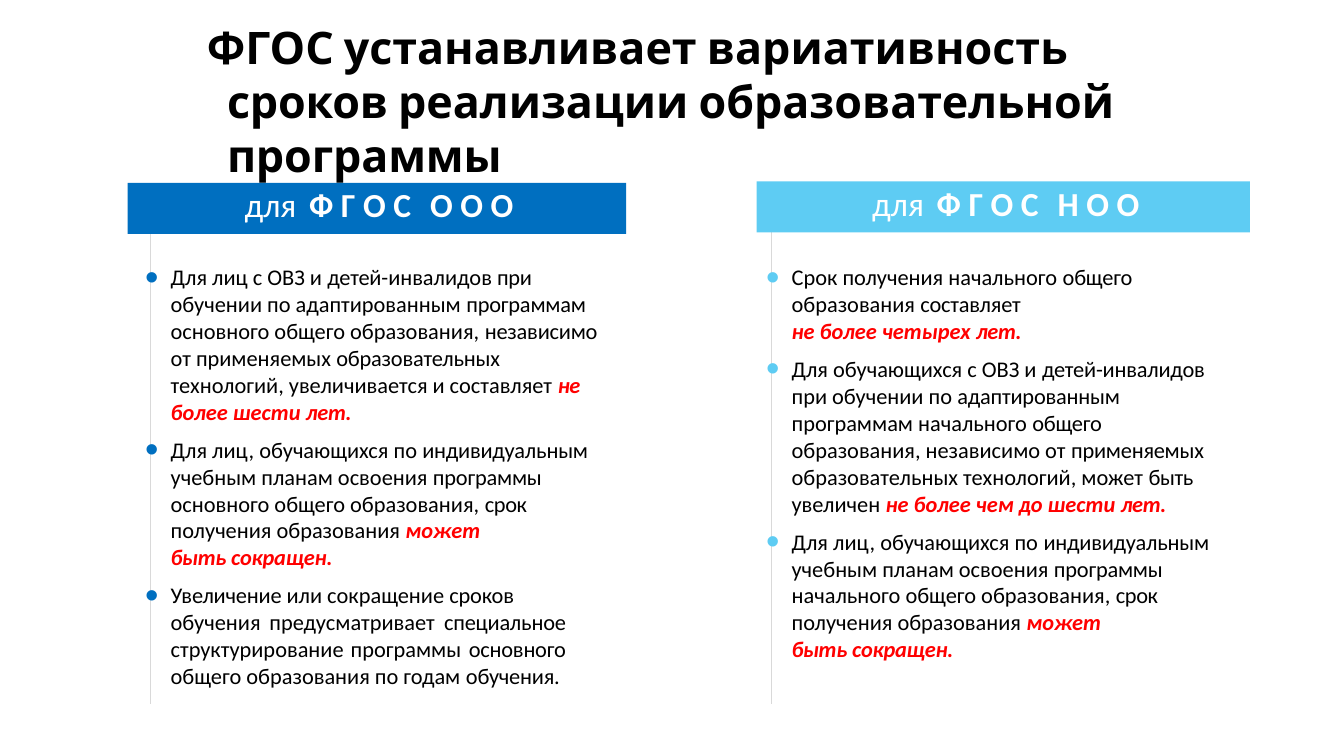
from pptx import Presentation
from pptx.dml.color import RGBColor
from pptx.enum.shapes import MSO_CONNECTOR, MSO_SHAPE
from pptx.enum.text import MSO_ANCHOR, MSO_AUTO_SIZE, PP_ALIGN
from pptx.oxml.ns import qn
from pptx.util import Inches, Pt
from lxml.etree import SubElement

BLACK = RGBColor(0, 0, 0)
WHITE = RGBColor(255, 255, 255)
RED = RGBColor(255, 0, 0)
GREY = RGBColor(0xD9, 0xD9, 0xD9)
BLUE = RGBColor(0x00, 0x6F, 0xC0)
SKY = RGBColor(0x5E, 0xCC, 0xF3)

# Runs are (text, letter spacing in points, strong)
TITLE = [("ФГОС устанавливает вариативность ", 0, True), ("сроков ", -.1, True),
         ("реализации образовательной ", 0, True), ("программы", -.1, True)]

# Paragraphs are (kind, runs)
ITEM, MORE, SLIM, EVEN = "item", "more", "slim", "even"
SHORT = (SLIM, [("получения образования ", 0, False), ("может ", 0, True),
                ("быть ", -.2, True), ("сокращен.", -.1, True)])
LEFT = [
    (ITEM, [("Для лиц с ОВЗ и ", 0, False), ("детей-", -.1, False),
            ("инвалидов ", 0, False), ("при", -.2, False)]),
    (MORE, [("обучении по адаптированным ", 0, False), ("программам ", -.1, False),
            ("основного общего образования, ", 0, False), ("независимо ", -.1, False),
            ("от применяемых ", 0, False), ("образовательных", -.1, False)]),
    (MORE, [("технологий, увеличивается и составляет ", 0, False), ("не ", -.2, True),
            ("более шести ", 0, True), ("лет.", -.2, True)]),
    (ITEM, [("Для лиц, обучающихся по", 0, False), (" индивидуальным ", -.1, False),
            ("учебным планам освоения ", 0, False), ("программы ", -.1, False),
            ("основного общего образования, ", 0, False), ("срок", -.2, False)]),
    SHORT,
    (ITEM, [("Увеличение ", -.1, False), ("или сокращение ", 0, False),
            ("сроков", -.1, False)]),
    (EVEN, [("обучения предусматривает ", 0, False), ("специальное ", -.1, False),
            ("структурирование программы ", 0, False), ("основного ", -.1, False),
            ("общего образования по годам ", 0, False), ("обучения.", -.1, False)]),
]
RIGHT = [
    (ITEM, [("Срок получения начального ", 0, False), ("общего ", -.1, False),
            ("образования ", 0, False), ("составляет", -.1, False)]),
    (MORE, [("не более четырех ", 0, True), ("лет.", -.2, True)]),
    (ITEM, [("Для обучающихся с ОВЗ и ", 0, False), ("детей-инвалидов ", -.1, False),
            ("при обучении по ", 0, False), ("адаптированным", -.1, False)]),
    (MORE, [("программам начального ", 0, False), ("общего", -.1, False)]),
    (MORE, [("образования, независимо от ", 0, False), ("применяемых ", -.1, False),
            ("образовательных технологий, может ", 0, False), ("быть ", -.2, False),
            ("увеличен ", 0, False), ("не более чем до шести ", 0, True),
            ("лет.", -.2, True)]),
    (ITEM, [("Для лиц, обучающихся по ", 0, False), ("индивидуальным ", -.1, False),
            ("учебным планам освоения ", 0, False), ("программы ", -.1, False),
            ("начального общего образования, ", 0, False), ("срок", -.2, False)]),
    SHORT,
]

# Columns: head letters, colour, head box, head indent, body box, rule x, paragraphs
COLS = [
    ("О О О", BLUE, (.95, 1.36, 3.71, .38), .87, (1.07, 1.94, 3.41, 3.2), 1.12, LEFT),
    ("Н О О", SKY, (5.63, 1.35, 3.67, .38), .86, (5.69, 1.94, 3.35, 3), 5.74, RIGHT),
]
INSET = {SLIM: .6, EVEN: .27}  # right indents

deck = Presentation()
deck.slide_width = Inches(10)
deck.slide_height = deck.slide_width * 9 // 16
slide = deck.slides.add_slide(deck.slide_layouts[6])
shapes = slide.shapes


def setup(shape, top=.01):
    frame = shape.text_frame
    frame.word_wrap = True
    frame.margin_left = frame.margin_right = frame.margin_bottom = 0
    frame.margin_top = Inches(top)
    frame.vertical_anchor = MSO_ANCHOR.TOP
    frame.auto_size = MSO_AUTO_SIZE.SHAPE_TO_FIT_TEXT
    return frame


def add_box(at, top=.01):
    return setup(shapes.add_textbox(*map(Inches, at)), top)


def indent(para, left, first=0, right=0):
    props = para._p.get_or_add_pPr()
    props.set("marL", str(Inches(left)))
    props.set("marR", str(Inches(right)))
    props.set("indent", str(Inches(first)))
    return props


def add_bullet(props, color):
    tint = SubElement(props, qn("a:buClr"))
    SubElement(tint, qn("a:srgbClr")).set("val", str(color))
    SubElement(props, qn("a:buSzPct")).set("val", "171000")
    SubElement(props, qn("a:buFont")).set("typeface", "Arial")
    SubElement(props, qn("a:buChar")).set("char", "•")


def add_run(para, text, size, color, face="Calibri", bold=False, slant=False, gap=0):
    run = para.add_run()
    run.text = text
    font = run.font
    font.name, font.size, font.bold, font.italic = face, Pt(size), bold, slant
    font.color.rgb = color
    if gap:
        run._r.get_or_add_rPr().set("spc", str(round(gap * 100)))


def add_body(at, color, paras):
    frame = add_box(at, .02)
    for i, (kind, runs) in enumerate(paras):
        para = frame.add_paragraph() if i else frame.paragraphs[0]
        props = indent(para, .2, -.19 if kind == ITEM else 0, INSET.get(kind, 0))
        para.alignment = PP_ALIGN.JUSTIFY if kind == EVEN else PP_ALIGN.LEFT
        if kind == ITEM:
            if i:
                para.space_before = Pt(6)
            add_bullet(props, color)
        for text, gap, hot in runs:
            add_run(para, text, 12, RED if hot else BLACK, bold=hot, slant=hot, gap=gap)


def add_head(at, color, left, name):
    bar = shapes.add_shape(MSO_SHAPE.RECTANGLE, *map(Inches, at))
    bar.shadow.inherit = False
    bar.fill.solid()
    bar.fill.fore_color.rgb = color
    bar.line.fill.background()
    para = setup(bar).paragraphs[0]
    para.alignment = PP_ALIGN.LEFT
    indent(para, left)
    # Word gaps are wider than letter gaps
    for text, gap, bold in (("для", 0, False), (" ", 2.7, False),
                            ("Ф Г О С", 0, True), (" ", 6, True), (name, 0, True)):
        add_run(para, text, 18, WHITE, bold=bold, gap=gap)


def add_rule(x):
    rule = shapes.add_connector(MSO_CONNECTOR.STRAIGHT, Inches(x), Inches(1.73),
                                Inches(x), Inches(5.24))
    rule.line.color.rgb = GREY
    rule.line.width = Pt(.5)
    SubElement(rule._element.spPr, qn("a:effectLst"))


# Title
para = add_box((.78, .14, 8.43, .83)).paragraphs[0]
indent(para, .91, -.15)
for text, gap, bold in TITLE:
    add_run(para, text, 24, BLACK, face="Cabin", bold=bold, gap=gap)

# Two columns
for name, color, head, left, body, x, paras in COLS:
    add_rule(x)
    add_body(body, color, paras)
    add_head(head, color, left, name)

deck.save("out.pptx")
